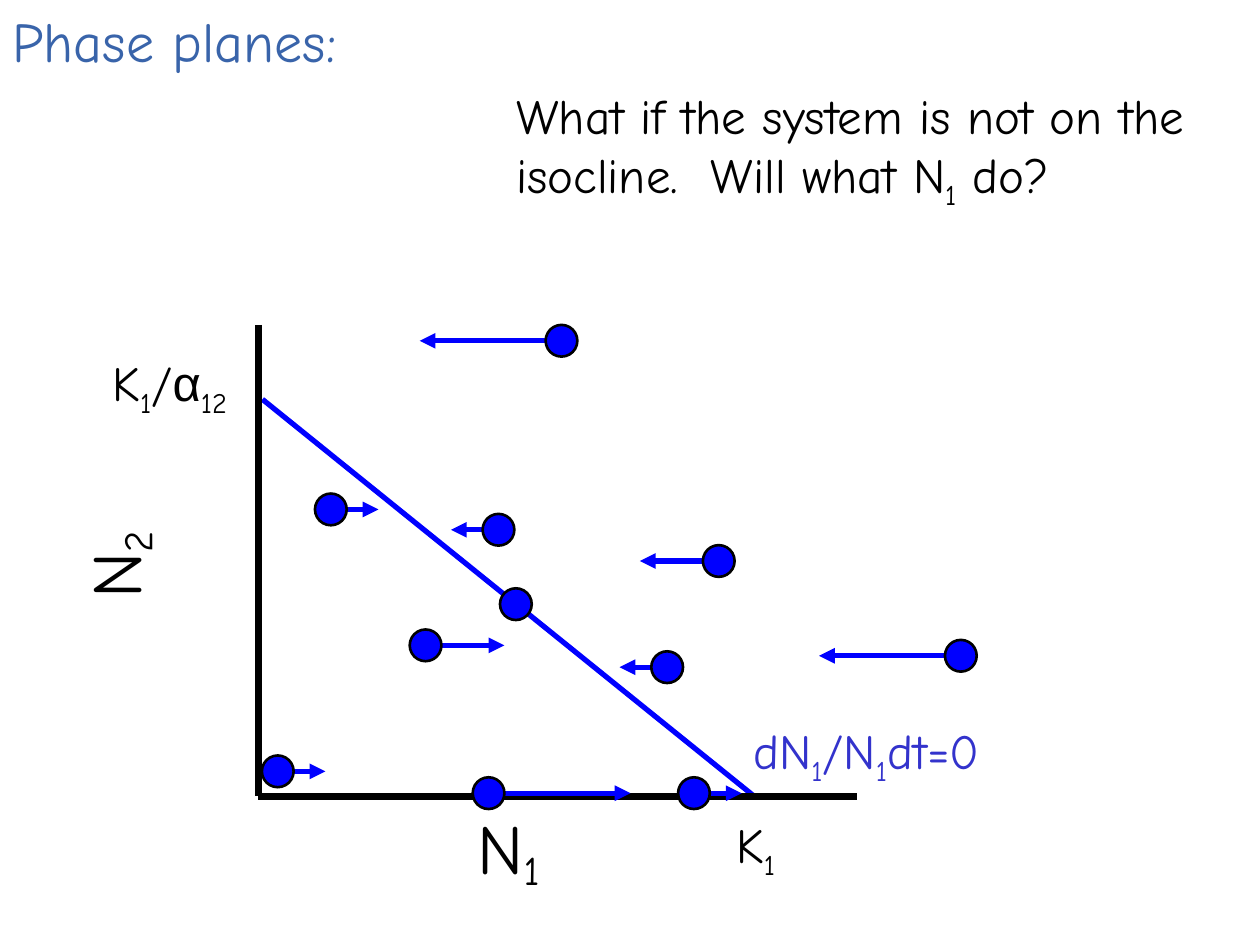
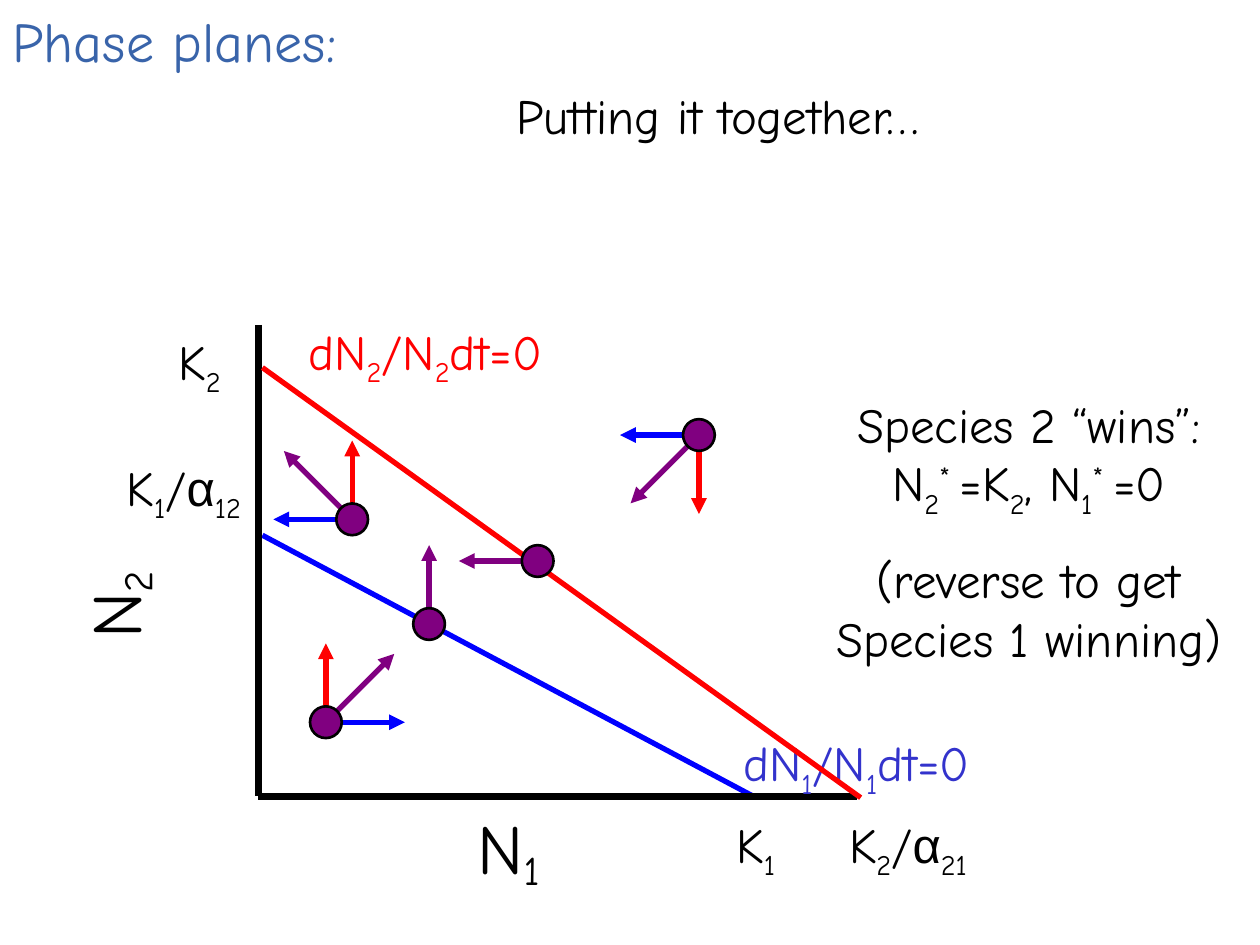
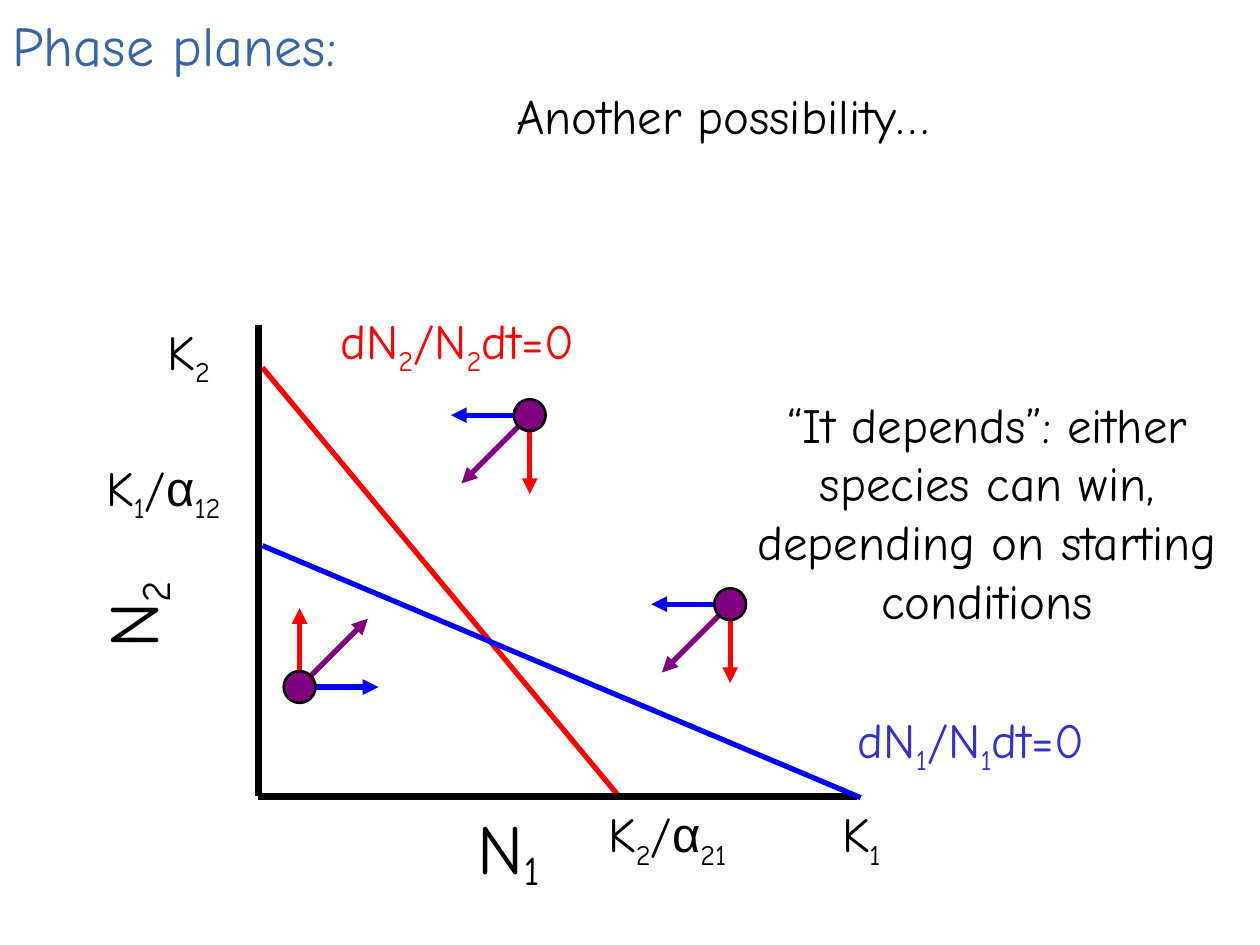
import dataclasses
import typing

import pptx
import pptx.dml.color
import pptx.enum.shapes
import pptx.enum.text
import pptx.oxml
import pptx.oxml.ns
import pptx.util

Cm = pptx.util.Cm
Pt = pptx.util.Pt
RGBColor = pptx.dml.color.RGBColor
ALIGN = pptx.enum.text.PP_ALIGN

BLACK = RGBColor(0x00, 0x00, 0x00)
BLUE = RGBColor(0x00, 0x00, 0xFF)
RED = RGBColor(0xFF, 0x00, 0x00)
PURPLE = RGBColor(0x80, 0x00, 0x80)
INDIGO = RGBColor(0x33, 0x33, 0xCC)
TITLE_BLUE = RGBColor(0x39, 0x64, 0xAA)

BODY_FONT = "Comic Neue"
GREEK_FONT = "Arial"

PLANE_BOX = (5.21, 6.55, 12.07, 9.5)
LABEL_HEIGHT = 1.45
DOT_RADIUS = 0.32
STEP = 1.27
DIAGONAL_STEP = 1.62

UP, DOWN, LEFT, RIGHT = (0, 1), (0, -1), (-1, 0), (1, 0)

K1, K2 = "K|_1", "K|_2"
K1_OVER_ALPHA, K2_OVER_ALPHA = "K|_1|/|α|_12", "K|_2|/|α|_21"
GROWTH_1, GROWTH_2 = "dN|_1|/N|_1|dt=0", "dN|_2|/N|_2|dt=0"
LABEL_WIDTHS = {K1: 2.11, K2: 2.11, K1_OVER_ALPHA: 4.45,
                K2_OVER_ALPHA: 4.45, GROWTH_1: 6.99, GROWTH_2: 6.99}


def add_runs(paragraph, markup, size, color, subscript=-25):
    baselines = {"_": subscript, "^": 30}
    for piece in markup.split("|"):
        if piece == "\n":
            paragraph.add_line_break()
            continue
        baseline = baselines.get(piece[0])
        run = paragraph.add_run()
        run.text = piece[1:] if baseline else piece
        run.font.name = GREEK_FONT if piece == "α" else BODY_FONT
        run.font.size = Pt(size)
        run.font.color.rgb = color
        if baseline:
            run._r.get_or_add_rPr().set("baseline", str(baseline * 1000))


def add_text(slide, box, paragraphs, size=28, color=BLACK, align=ALIGN.CENTER,
             wrap=True, subscript=-25, line_spacing=None):
    shape = slide.shapes.add_textbox(*map(Cm, box))
    frame = shape.text_frame
    frame.word_wrap = wrap
    frame.auto_size = pptx.enum.text.MSO_AUTO_SIZE.SHAPE_TO_FIT_TEXT
    for index, markup in enumerate(paragraphs):
        paragraph = frame.add_paragraph() if index else frame.paragraphs[0]
        paragraph.alignment = align
        paragraph.line_spacing = line_spacing
        if index:
            paragraph.space_before = Pt(17)
        add_runs(paragraph, markup, size, color, subscript)
    return shape


@dataclasses.dataclass
class PhasePlane:
    slide: typing.Any
    box: tuple

    def place(self, x, y):
        left, top, width, height = self.box
        return left + x, top + height - y

    def line(self, start, end, color, width=3, arrow=False):
        points = (*self.place(*start), *self.place(*end))
        connector = self.slide.shapes.add_connector(
            pptx.enum.shapes.MSO_CONNECTOR.STRAIGHT, *map(Cm, points))
        connector.line.color.rgb = color
        connector.line.width = Pt(width)
        if arrow:
            tail = pptx.oxml.parse_xml(
                f'<a:tailEnd {pptx.oxml.ns.nsdecls("a")} type="triangle"/>')
            connector.line._get_or_add_ln().append(tail)
        connector._element.spPr.append(
            pptx.oxml.parse_xml(f'<a:effectLst {pptx.oxml.ns.nsdecls("a")}/>'))

    def axes(self, n2_x, n2_y):
        width, height = self.box[2:]
        self.line((0, height), (0, 0), BLACK, 4)
        self.line((0, 0), (width, 0), BLACK, 4)
        self.axis_name("N|_1", 4.17, 0.23, 2.06)
        self.axis_name("N|_2", n2_x, n2_y, 2.21).rotation = 270

    def axis_name(self, markup, x, y, width):
        return add_text(self.slide, (*self.place(x, y), width, 2.21), [markup],
                        size=40, align=ALIGN.LEFT, wrap=False, subscript=-16,
                        line_spacing=1.15)

    def label(self, markup, x, y, color=BLACK):
        box = (*self.place(x, y), LABEL_WIDTHS[markup], LABEL_HEIGHT)
        add_text(self.slide, box, [markup], color=color)

    def isocline(self, y_intercept, x_intercept, color):
        self.line((0.08, y_intercept), (x_intercept, -0.03), color)

    def dot(self, x, y, color):
        left, top = self.place(x - DOT_RADIUS, y + DOT_RADIUS)
        shape = self.slide.shapes.add_shape(
            pptx.enum.shapes.MSO_SHAPE.OVAL, Cm(left), Cm(top),
            Cm(2 * DOT_RADIUS), Cm(2 * DOT_RADIUS))
        shape.shadow.inherit = False
        shape.fill.solid()
        shape.fill.fore_color.rgb = color
        shape.line.color.rgb = BLACK
        shape.line.width = Pt(1.5)

    def arrow(self, x, y, direction, length, color):
        scale = 0.71 if all(direction) else 1
        start, end = [
            (x + direction[0] * reach * scale, y + direction[1] * reach * scale)
            for reach in (DOT_RADIUS, DOT_RADIUS + length)]
        self.line(start, end, color, arrow=True)

    def combined_motion(self, x, y, vertical, horizontal):
        diagonal = (horizontal[0], vertical[1])
        self.arrow(x, y, vertical, STEP, RED)
        self.arrow(x, y, horizontal, STEP, BLUE)
        self.arrow(x, y, diagonal, DIAGONAL_STEP, PURPLE)
        self.dot(x, y, PURPLE)

    def single_motion(self, x, y, direction, length, color):
        self.arrow(x, y, direction, length, color)
        self.dot(x, y, color)


def start_slide(presentation, headline, title_top=0, headline_height=LABEL_HEIGHT):
    slide = presentation.slides.add_slide(presentation.slide_layouts[5])
    title = slide.shapes.title
    title.left, title.top, title.width, title.height = map(
        Cm, (0, title_top, 8.26, 1.6))
    frame = title.text_frame
    frame.vertical_anchor = pptx.enum.text.MSO_ANCHOR.TOP
    frame.auto_size = pptx.enum.text.MSO_AUTO_SIZE.NONE
    paragraph = frame.paragraphs[0]
    paragraph.alignment = ALIGN.LEFT
    add_runs(paragraph, "Phase planes:", 32, TITLE_BLUE)
    add_text(slide, (10.16, 1.6, 14.6, headline_height), [headline], align=ALIGN.LEFT)
    return slide, PhasePlane(slide, PLANE_BOX)


def build_off_isocline(presentation):
    slide, plane = start_slide(
        presentation,
        "What if the system is not on the isocline.  Will what N|_1| do?",
        headline_height=2.62)
    plane.isocline(8, 10.03, BLUE)
    plane.axes(-4.17, 5.94)
    plane.label(K1_OVER_ALPHA, -4.01, 9.07)
    plane.label(GROWTH_1, 8.76, 1.65, INDIGO)
    plane.label(K1, 8.97, -0.25)
    plane.dot(5.19, 3.87, BLUE)
    for x, y, direction, length in [
        (1.46, 5.78, RIGHT, 0.64),
        (4.64, 0.06, RIGHT, 2.54),
        (6.11, 9.18, LEFT, 2.54),
        (0.39, 0.5, RIGHT, 0.64),
        (3.37, 3.04, RIGHT, 1.27),
        (14.16, 2.83, LEFT, 2.54),
        (4.84, 5.37, LEFT, 0.64),
        (8.24, 2.6, LEFT, 0.64),
        (9.28, 4.74, LEFT, 1.27),
        (8.78, 0.06, RIGHT, 0.64),
    ]:
        plane.single_motion(x, y, direction, length, BLUE)


def build_species_2_wins(presentation):
    slide, plane = start_slide(presentation, "Putting it together…")
    plane.isocline(5.26, 10.03, BLUE)
    plane.axes(-4.17, 5.13)
    plane.label(K1_OVER_ALPHA, -3.73, 6.96)
    plane.label(GROWTH_1, 8.56, 1.4, INDIGO)
    plane.label(K1, 8.97, -0.25)
    plane.isocline(8.64, 12.14, RED)
    plane.label(GROWTH_2, -0.13, 9.7, RED)
    plane.label(K2_OVER_ALPHA, 10.87, -0.25)
    plane.label(K2, -2.24, 9.5)
    plane.combined_motion(1.36, 1.49, UP, RIGHT)
    plane.combined_motion(8.88, 7.28, DOWN, LEFT)
    plane.combined_motion(1.89, 5.58, UP, LEFT)
    plane.single_motion(3.44, 3.47, UP, STEP, PURPLE)
    plane.single_motion(5.63, 4.74, LEFT, STEP, PURPLE)
    add_text(slide, (16.08, 7.82, 9.32, 5.59), [
        "Species 2 “wins”:|\n|N|_2|^* |=K|_2|, N|_1|^* |=0",
        "(reverse to get Species 1 winning)"])


def build_it_depends(presentation):
    slide, plane = start_slide(presentation, "Another possibility…", title_top=0.08)
    plane.isocline(8.64, 7.29, RED)
    plane.axes(-3.81, 4.93)
    plane.label(K1_OVER_ALPHA, -4.14, 6.96)
    plane.label(GROWTH_1, 10.87, 1.88, INDIGO)
    plane.label(K1, 11.1, -0.03)
    plane.isocline(5.05, 12.14, BLUE)
    plane.label(GROWTH_2, 0.51, 9.91, RED)
    plane.label(K2_OVER_ALPHA, 6.02, -0.03)
    plane.label(K2, -2.46, 9.7)
    plane.combined_motion(0.83, 2.2, UP, RIGHT)
    plane.combined_motion(5.47, 7.68, DOWN, LEFT)
    plane.combined_motion(9.51, 3.87, DOWN, LEFT)
    add_text(slide, (14.4, 7.82, 11, 5), [
        "“It depends”: either species can win, depending on starting conditions"])


def main():
    presentation = pptx.Presentation()
    presentation.slide_width = Cm(25.4)
    presentation.slide_height = Cm(19.05)
    build_off_isocline(presentation)
    build_species_2_wins(presentation)
    build_it_depends(presentation)
    presentation.save("out.pptx")


if __name__ == "__main__":
    main()
